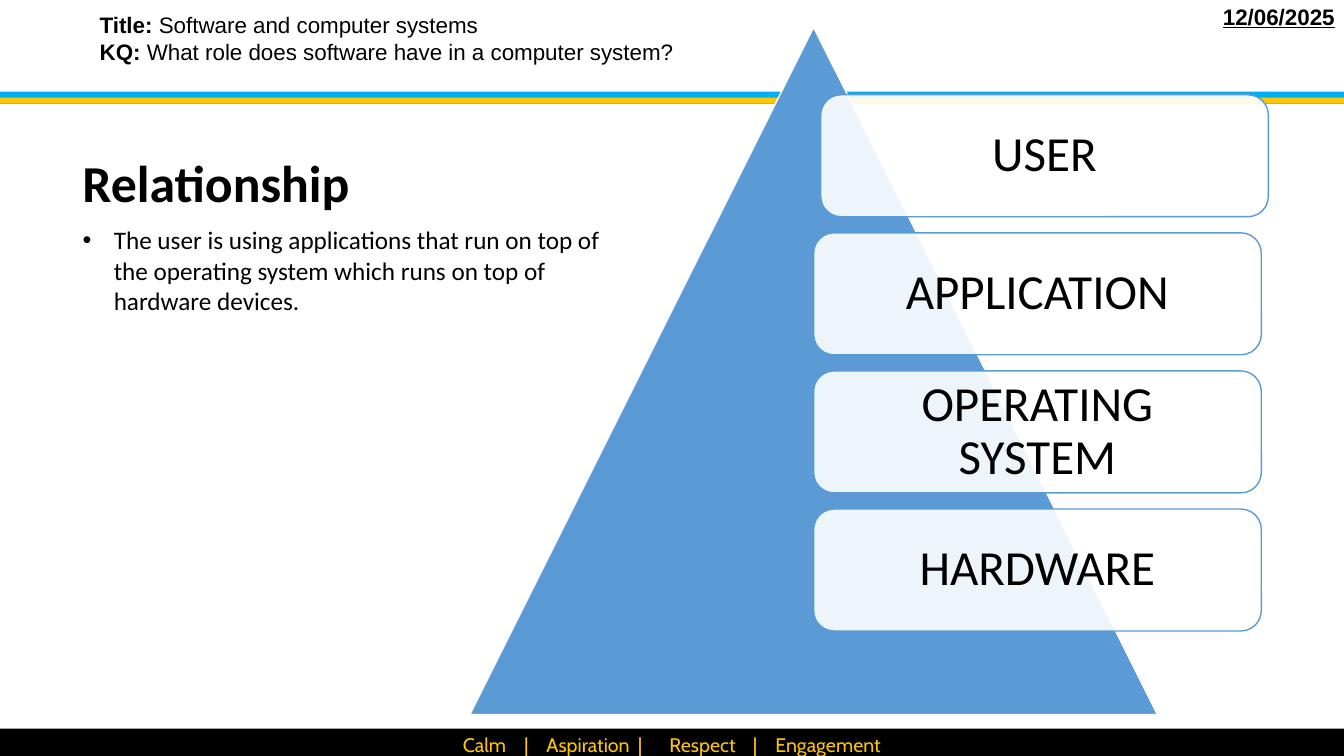
from dataclasses import dataclass

from lxml import etree
from pptx import Presentation
from pptx import util as u
from pptx.dml.color import RGBColor
from pptx.enum import shapes, text
from pptx.oxml import ns

BLACK = RGBColor(0x00, 0x00, 0x00)
WHITE = RGBColor(0xFF, 0xFF, 0xFF)
SKY = RGBColor(0x00, 0xAF, 0xF0)
YELLOW = RGBColor(0xFE, 0xC6, 0x00)
BLUE = RGBColor(0x5B, 0x9B, 0xD5)
KIND = shapes.MSO_SHAPE
ANCHOR = text.MSO_ANCHOR


@dataclass
class Box:
    left: float
    top: float
    width: float
    height: float

    def lengths(self) -> list:
        return [u.Inches(v) for v in (self.left, self.top, self.width, self.height)]


@dataclass
class Layer:
    label: str
    left: float = 8.07


LAYERS = [Layer("USER", 8.14), Layer("APPLICATION"),
          Layer("OPERATING SYSTEM"), Layer("HARDWARE")]
LAYER_TOP, LAYER_STEP = 0.94, 1.37

HEADINGS = [("Title: ", "Software and computer systems"),
            ("KQ: ", "What role does software have in a computer system?")]

VALUES = ["Calm", "Aspiration", "Respect", "Engagement"]
VALUES_LEFT = 4.59
# Each divider is centred on its stop, each following word starts on its own
VALUE_STOPS = [("ctr", 5.22), ("l", 5.42), ("ctr", 6.35),
               ("l", 6.64), ("ctr", 7.49), ("l", 7.69)]


def add_block(slide, kind, box: Box, fill: RGBColor, line: RGBColor | None = None):
    block = slide.shapes.add_shape(kind, *box.lengths())
    block.shadow.inherit = False
    block.fill.solid()
    block.fill.fore_color.rgb = fill
    if line is None:
        block.line.fill.background()
    else:
        block.line.color.rgb = line
        block.line.width = u.Pt(1)
    return block


def add_text_frame(slide, box: Box):
    frame = slide.shapes.add_textbox(*box.lengths()).text_frame
    frame.word_wrap = True
    return frame


def style(paragraph, font_name: str, size: float, color: RGBColor = BLACK,
          bold: bool | None = None) -> None:
    font = paragraph.font
    font.name, font.size, font.bold = font_name, u.Pt(size), bold
    font.color.rgb = color


def set_insets(frame, horizontal: float, vertical: float) -> None:
    frame.margin_left = frame.margin_right = u.Inches(horizontal)
    frame.margin_top = frame.margin_bottom = u.Inches(vertical)


def add_values(footer) -> None:
    frame = footer.text_frame
    set_insets(frame, 0.07, 0.04)
    frame.margin_left = u.Inches(VALUES_LEFT)
    frame.vertical_anchor = ANCHOR.TOP
    line = frame.paragraphs[0]
    line.text = "\t|\t".join(VALUES)
    line.alignment = text.PP_ALIGN.LEFT
    stops = etree.SubElement(line._p.get_or_add_pPr(), ns.qn("a:tabLst"))
    for align, position in VALUE_STOPS:
        etree.SubElement(stops, ns.qn("a:tab"), algn=align,
                         pos=str(u.Inches(position - VALUES_LEFT)))
    style(line, "Cabin", 14, YELLOW)


def add_layer(slide, layer: Layer, top: float) -> None:
    card = add_block(slide, KIND.ROUNDED_RECTANGLE,
                     Box(layer.left, top, 4.44, 1.21), WHITE, BLUE)
    white = card.fill._xPr.find(ns.qn("a:solidFill"))[0]
    etree.SubElement(white, ns.qn("a:alpha"), val="90000")
    frame = card.text_frame
    frame.word_wrap = True
    set_insets(frame, 0.21, 0.21)
    frame.vertical_anchor = ANCHOR.MIDDLE
    label = frame.paragraphs[0]
    label.text = layer.label
    label.alignment = text.PP_ALIGN.CENTER
    label.line_spacing = 0.9
    style(label, "Calibri", 35)


def main() -> None:
    deck = Presentation()
    deck.slide_width, deck.slide_height = u.Inches(13.33), u.Inches(7.5)
    slide = deck.slides.add_slide(deck.slide_layouts[6])

    # Footer and header bands
    footer = add_block(slide, KIND.RECTANGLE, Box(0, 7.23, 13.33, 0.3), BLACK)
    add_values(footer)
    add_block(slide, KIND.RECTANGLE, Box(0, 0.91, 13.33, 0.12), SKY)
    add_block(slide, KIND.RECTANGLE, Box(0, 0.97, 13.33, 0.06), YELLOW)

    # Lesson title, key question and date
    header = add_text_frame(slide, Box(0.89, 0.06, 12.02, 0.64))
    for index, (tag, wording) in enumerate(HEADINGS):
        heading = header.add_paragraph() if index else header.paragraphs[0]
        style(heading, "Arial", 16)
        tag_run = heading.add_run()
        tag_run.text, tag_run.font.bold = tag, True
        heading.add_run().text = wording

    date_frame = add_text_frame(slide, Box(12.03, 0.01, 1.95, 0.3))
    date_frame.vertical_anchor = ANCHOR.MIDDLE
    date = date_frame.paragraphs[0]
    date.text = "12/06/2025"
    style(date, "Arial", 16, bold=True)
    date.font.underline = True

    # Pyramid of system layers
    add_block(slide, KIND.ISOSCELES_TRIANGLE, Box(4.66, 0.27, 6.82, 6.82), BLUE, WHITE)
    for index, layer in enumerate(LAYERS):
        add_layer(slide, layer, LAYER_TOP + index * LAYER_STEP)

    # Explanation
    explanation = add_text_frame(slide, Box(0.72, 2.18, 5.48, 1.01)).paragraphs[0]
    explanation.text = ("The user is using applications that run on top of the operating "
                        "system which runs on top of hardware devices.")
    props = explanation._p.get_or_add_pPr()
    props.set("marL", str(u.Inches(0.31)))
    props.set("indent", str(u.Inches(-0.31)))
    etree.SubElement(props, ns.qn("a:buFont"), typeface="Arial")
    etree.SubElement(props, ns.qn("a:buChar"), char="•")
    style(explanation, "Calibri", 18)

    relationship = add_text_frame(slide, Box(0.72, 1.45, 3.86, 0.72)).paragraphs[0]
    relationship.text = "Relationship"
    style(relationship, "Calibri", 37, bold=True)

    deck.save("out.pptx")


if __name__ == "__main__":
    main()
